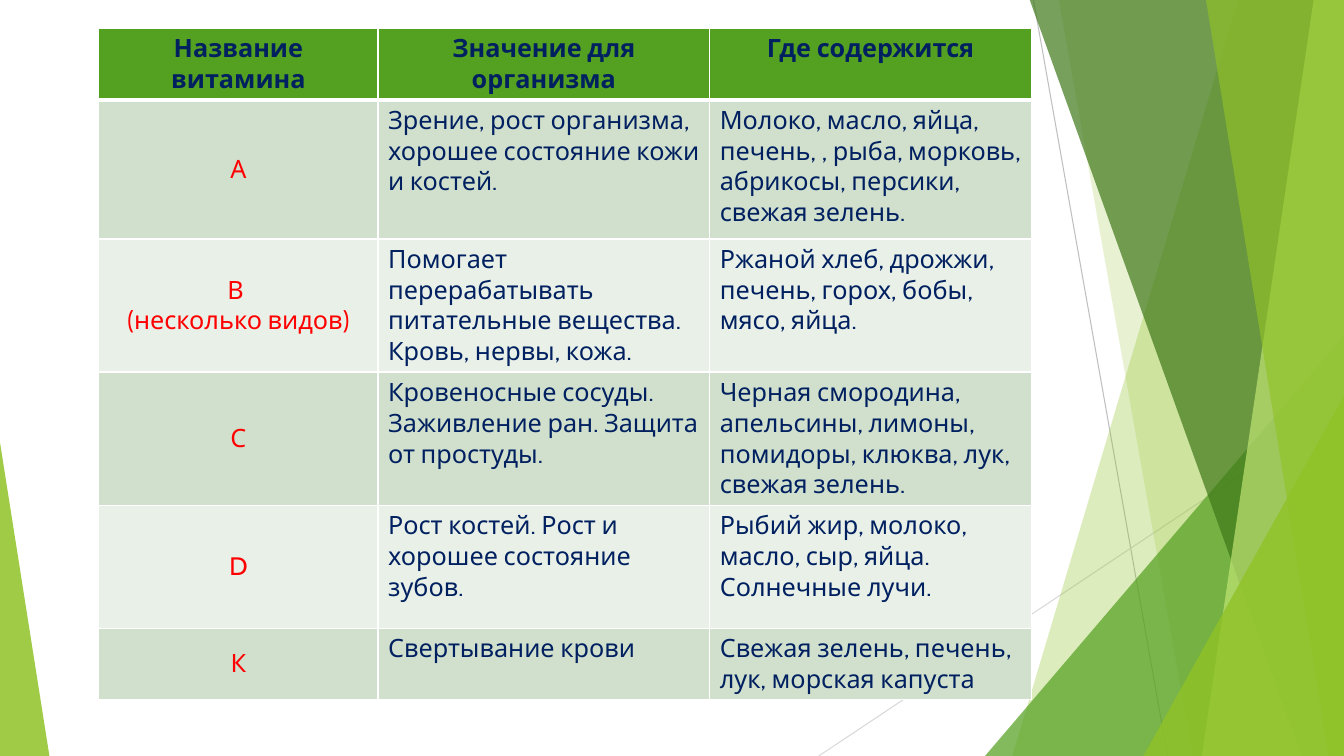
from lxml import etree
from pptx import Presentation
from pptx.dml.color import RGBColor
from pptx.enum.shapes import MSO_CONNECTOR, MSO_SHAPE
from pptx.enum.text import MSO_ANCHOR, PP_ALIGN
from pptx.oxml.ns import qn
from pptx.util import Inches, Pt

STRAIGHT = MSO_CONNECTOR.STRAIGHT
TRIANGLE = MSO_SHAPE.ISOSCELES_TRIANGLE
TOP, MIDDLE = MSO_ANCHOR.TOP, MSO_ANCHOR.MIDDLE
LEFT, CENTER = PP_ALIGN.LEFT, PP_ALIGN.CENTER
WIDTH, HEIGHT = 13.33, 7.5
FONT = "Cabin"
COLORS = {
    "lime": "90C226", "green": "54A021", "forest": "3F7819", "pale": "C0E474",
    "steep": "BFBFBF", "shallow": "D9D9D9", "border": "FFFFFF",
    "band": "D1DFCD", "light": "E9F0E8", "navy": "002060", "red": "FF0000",
}
HEADER = ["Название витамина", "Значение для организма", "Где содержится"]
VITAMINS = [
    ("А", "Зрение, рост организма, хорошее состояние кожи и костей.",
     "Молоко, масло, яйца, печень, , рыба, морковь, абрикосы, персики, свежая зелень."),
    ("В \n(несколько видов)",
     "Помогает перерабатывать питательные вещества. Кровь, нервы, кожа.",
     "Ржаной хлеб, дрожжи, печень, горох, бобы, мясо, яйца."),
    ("С", "Кровеносные сосуды. Заживление ран. Защита от простуды.",
     "Черная смородина, апельсины, лимоны, помидоры, клюква, лук, свежая зелень."),
    ("D", "Рост костей. Рост и хорошее состояние зубов.",
     "Рыбий жир, молоко, масло, сыр, яйца. Солнечные лучи."),
    ("К", "Свертывание крови", "Свежая зелень, печень, лук, морская капуста"),
]
COL_WIDTHS = [2.77, 3.29, 3.19]
ROW_HEIGHTS = [0.62, 1.38, 0.98, 1.22, 1.22, 0.62]


def rgb(name):
    """Return the named colour."""
    return RGBColor.from_string(COLORS[name])


def paint(sp, color, opacity):
    """Fill a shape with a translucent colour, without line or shadow."""
    sp.shadow.inherit = False
    sp.line.fill.background()
    sp.fill.solid()
    sp.fill.fore_color.rgb = rgb(color)
    clr = sp._element.spPr.find(".//" + qn("a:srgbClr"))
    etree.SubElement(clr, qn("a:alpha"), val=str(opacity * 1000))


def add_line(s, start, end, color):
    """Draw a thin straight line between two points."""
    ends = [Inches(v) for v in (*start, *end)]
    line = s.shapes.add_connector(STRAIGHT, *ends)
    line.line.color.rgb = rgb(color)
    line.line.width = Pt(0.75)
    etree.SubElement(line._element.spPr, qn("a:effectLst"))


def add_shard(s, top_x, bottom_x, right, bottom, color, opacity):
    """Draw a full-height shard from a slanted left edge to the right edge."""
    top = -0.01
    points = [(right, top), (right, bottom), (bottom_x, bottom)]
    builder = s.shapes.build_freeform(Inches(top_x), Inches(top), scale=1.0)
    builder.add_line_segments([(Inches(x), Inches(y)) for x, y in points], close=True)
    paint(builder.convert_to_shape(), color, opacity)


def add_corner(s, x, y, w, h, apex, color, opacity):
    """Draw a triangle whose apex lies at the given share of its width."""
    sp = s.shapes.add_shape(TRIANGLE, Inches(x), Inches(y), Inches(w), Inches(h))
    sp.adjustments[0] = apex
    paint(sp, color, opacity)


def add_facets(s, right, bottom):
    """Draw the decorative facets against the given right and bottom edges."""
    add_line(s, (10.25, 0), (11.58, bottom), "steep")
    add_line(s, (right, 4.03), (8.12, bottom), "shallow")
    add_shard(s, 12.28, 10.04, right, bottom, "lime", 30)
    add_shard(s, 10.5, 11.83, right, bottom, "lime", 20)
    add_corner(s, right - 3.56, bottom - 4.17, 3.56, 4.17, 1, "green", 72)
    add_shard(s, 10.21, 12.91, right, bottom, "forest", 70)
    add_shard(s, 13.03, 11.92, right, bottom, "pale", 70)
    add_shard(s, 11.96, 13.18, right, bottom, "lime", 65)
    add_corner(s, right - 1.99, bottom - 3.57, 1.99, 3.57, 1, "lime", 80)
    add_corner(s, 0, bottom - 3.11, 0.49, 3.11, 0, "lime", 85)


def add_text(tf, text, color="navy", bold=False, align=LEFT):
    """Write text into a frame, one paragraph per line."""
    for i, line in enumerate(text.split("\n")):
        p = tf.add_paragraph() if i else tf.paragraphs[0]
        p.alignment = align
        r = p.add_run()
        r.text = line
        r.font.name, r.font.size, r.font.bold = FONT, Pt(18), bold
        r.font.color.rgb = rgb(color)


def style_cell(cell, fill, widths):
    """Fill a cell and give its four sides borders of the given widths."""
    tcPr = cell._tc.get_or_add_tcPr()
    for side, width in zip("LRTB", widths):
        ln = etree.SubElement(tcPr, qn(f"a:ln{side}"), w=str(Pt(width)))
        solid = etree.SubElement(ln, qn("a:solidFill"))
        etree.SubElement(solid, qn("a:srgbClr"), val=COLORS["border"])
    cell.fill.solid()
    cell.fill.fore_color.rgb = rgb(fill)


def add_vitamin_table(s, x, y, w, h):
    """Place the vitamin table in the given box."""
    rows = [HEADER, *VITAMINS]
    frame = s.shapes.add_table(len(rows), len(HEADER), Inches(x), Inches(y),
                               Inches(w), Inches(h))
    table = frame.table
    for column, width in zip(table.columns, COL_WIDTHS):
        column.width = Inches(width)
    for row, height in zip(table.rows, ROW_HEIGHTS):
        row.height = Inches(height)
    for i, texts in enumerate(rows):
        head = i == 0
        fill = "green" if head else "band" if i % 2 else "light"
        widths = (1, 1, 3 if i == 1 else 1, 3 if head else 1)
        for j, text in enumerate(texts):
            cell = table.cell(i, j)
            name = j == 0 and not head
            style_cell(cell, fill, widths)
            cell.vertical_anchor = MIDDLE if name else TOP
            add_text(cell.text_frame, text, color="red" if name else "navy",
                     bold=head, align=CENTER if head or name else LEFT)


def main():
    """Build and save the slide."""
    prs = Presentation()
    prs.slide_width, prs.slide_height = Inches(WIDTH), Inches(HEIGHT)
    s = prs.slides.add_slide(prs.slide_layouts[6])
    add_facets(s, WIDTH, HEIGHT)
    add_vitamin_table(s, 0.98, 0.28, sum(COL_WIDTHS), sum(ROW_HEIGHTS))
    prs.save("out.pptx")


if __name__ == "__main__":
    main()
